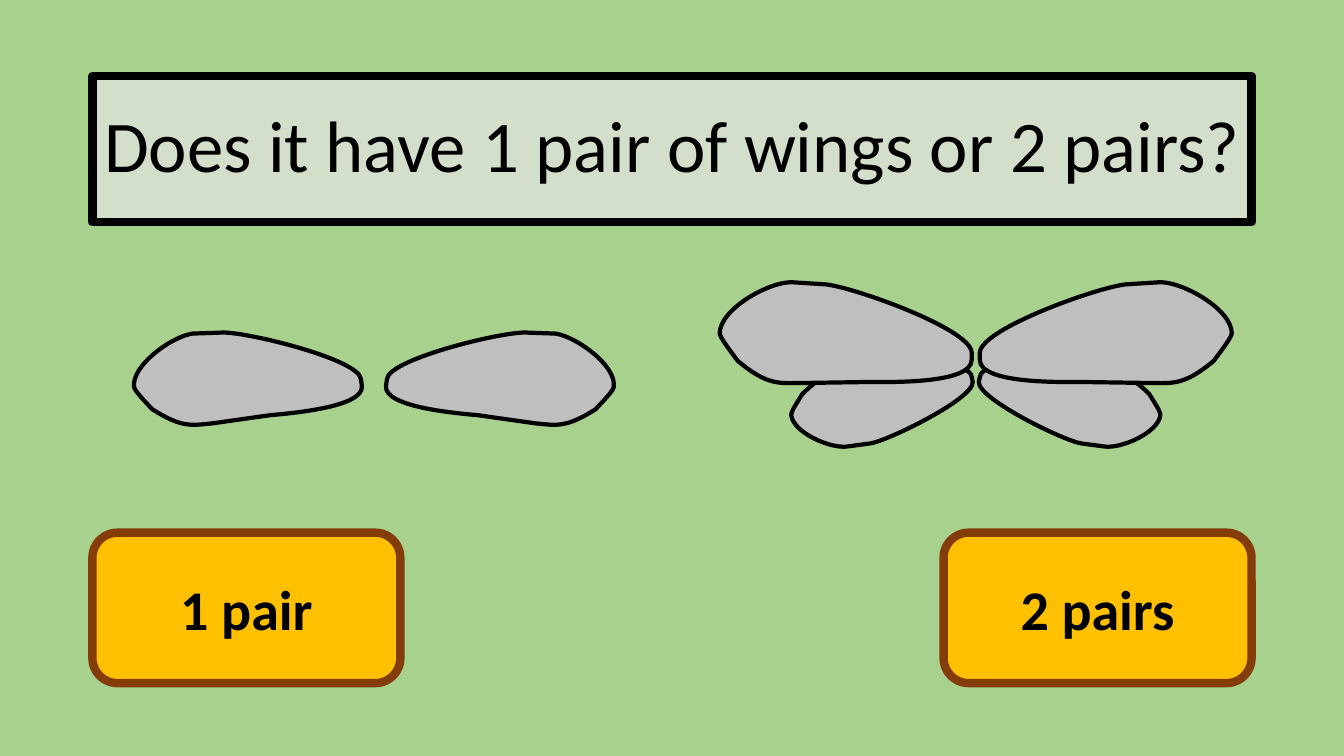
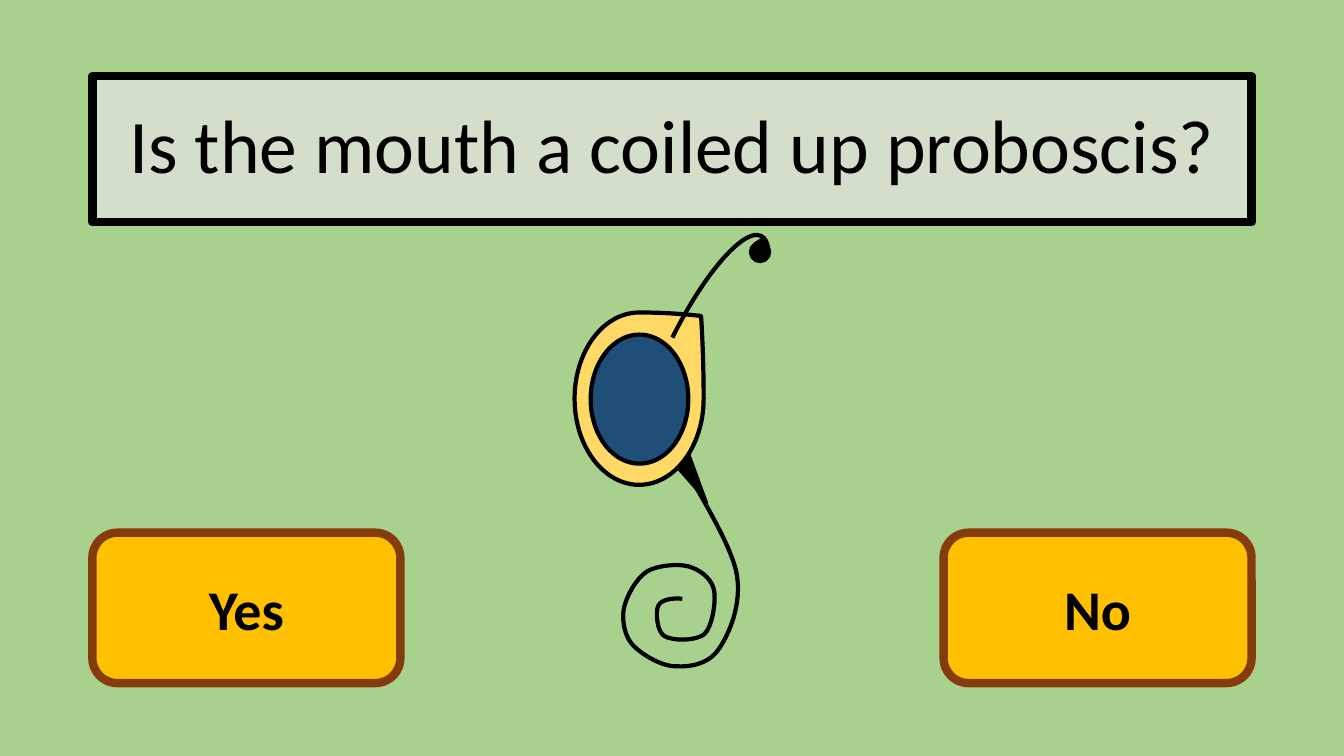
from lxml.etree import SubElement
from pptx import Presentation
from pptx.dml.color import RGBColor
from pptx.enum.shapes import MSO_SHAPE
from pptx.enum.text import MSO_ANCHOR, MSO_AUTO_SIZE, PP_ALIGN
from pptx.oxml.ns import qn
from pptx.util import Pt

GREEN = RGBColor(0xA9, 0xD1, 0x8E)
PALE = RGBColor(0xE7, 0xE6, 0xE6)
BLACK = RGBColor(0x00, 0x00, 0x00)
AMBER = RGBColor(0xFF, 0xC0, 0x00)
BROWN = RGBColor(0x84, 0x3C, 0x0B)
GREY = RGBColor(0xBF, 0xBF, 0xBF)
YELLOW = RGBColor(0xFF, 0xD9, 0x66)
BLUE = RGBColor(0x1F, 0x4E, 0x79)
FONT = "Calibri"
MARGIN, BUTTON_W = 66, 220
SLIDE_W, SLIDE_H = 960, 540

SINGLE_WING = [
    [(257.8, 270.7)],
    [(256.3, 256.3), (172.8, 236.2), (157.7, 237.6)],
    [(137.5, 238.3)],
    [(122.4, 240.5), (93.6, 261.4), (95.8, 276.5)],
    [(96.5, 278.6), (97.2, 280.1), (108.7, 292.3)],
    [(130.3, 306), (136.8, 303.8), (151.9, 302.4)],
    [(193, 296.6)],
    [(208.1, 295.2), (259.9, 290.9), (258.5, 275.8)],
    [(257.8, 270.7)],
]
UPPER_WING = [
    [(694.1, 252)],
    [(694.1, 234.7), (604.1, 203), (587.5, 203)],
    [(565.2, 201.6)],
    [(548.6, 201.6), (514.1, 221), (514.1, 238.3)],
    [(514.8, 240.5), (515.5, 242.6), (527, 257.8)],
    [(548.6, 275.8), (556.6, 273.6), (573.1, 273.6)],
    [(619.9, 272.9)],
    [(636.5, 272.9), (694.1, 274.3), (694.1, 257)],
    [(694.1, 252)],
]
LOWER_WING = [
    [(694.8, 272.9)],
    [(695.5, 285.1), (632.9, 315.4), (621.4, 316.8)],
    [(604.8, 319)],
    [(592.6, 320.4), (566.6, 308.9), (565.2, 296.6)],
    [(565.2, 294.5), (565.9, 293), (573.1, 281.5)],
    [(587.5, 267.1), (593.3, 267.8), (605.5, 266.4)],
    [(639.4, 263.5)],
    [(651.6, 262.8), (692.6, 257), (694.1, 269.3)],
    [(694.8, 272.9)],
]
PROBOSCIS = [
    [(480.2, 321.1)],
    [(482.4, 321.1), (483.8, 321.8), (491, 337)],
    [(499, 352.1), (522.7, 389.5), (526.3, 410.4)],
    [(529.9, 431.3), (521.3, 452.2), (513.4, 463.7)],
    [(506.2, 474.5), (492.5, 476.6), (482.4, 475.9)],
    [(472.3, 475.9), (457.9, 467.3), (451.4, 460.1)],
    [(445.7, 452.9), (444.2, 442.8), (445.7, 434.2)],
    [(447.8, 425.5), (454.3, 413.3), (462.2, 408.2)],
    [(469.4, 403.9), (483.8, 402.5), (491.8, 404.6)],
    [(499.7, 406.8), (507.6, 412.6), (509.8, 420.5)],
    [(511.9, 428.4), (509, 447.1), (503.3, 452.9)],
    [(497.5, 457.9), (480.2, 457.9), (474.5, 454.3)],
    [(469.4, 451.4), (468, 437), (470.2, 432.7)],
    [(472.3, 428.4), (479.5, 427), (487.4, 427.7)],
]
PROBOSCIS_BASE = [[(492.5, 324)], [(505.4, 359.3)], [(484.6, 335.5)], [(492.5, 324)]]


def paint(sp, fill=None, line=BLACK, width=3):
    """Set the fill and outline of a shape."""
    if fill is None:
        sp.fill.background()
    else:
        sp.fill.solid()
        sp.fill.fore_color.rgb = fill
    sp.line.color.rgb = line
    sp.line.width = Pt(width)


def write(sp, text, size, bold=False, spacing=1.0):
    """Write one centred line of text in a shape."""
    tf = sp.text_frame
    tf.word_wrap = True
    tf.auto_size = MSO_AUTO_SIZE.NONE
    tf.vertical_anchor = MSO_ANCHOR.MIDDLE
    tf.margin_left = tf.margin_right = Pt(4)
    p = tf.paragraphs[0]
    p.alignment = PP_ALIGN.CENTER
    p.line_spacing = spacing
    r = p.add_run()
    r.text = text
    r.font.name, r.font.size, r.font.bold = FONT, Pt(size), bold
    r.font.color.rgb = BLACK


def add_preset(s, kind, x, y, w, h, rotation=0, **style):
    """Add a painted preset shape."""
    sp = s.shapes.add_shape(kind, Pt(x), Pt(y), Pt(w), Pt(h))
    sp.shadow.inherit = False
    sp.rotation = rotation
    paint(sp, **style)
    return sp


def add_outline(s, outline, closed=True, **style):
    """Add a freeform whose one-point segments are lines and three-point segments curves."""
    (x, y), *points = [(Pt(px), Pt(py)) for segment in outline for px, py in segment]
    builder = s.shapes.build_freeform(x, y)
    builder.add_line_segments(points, close=closed)
    sp = builder.convert_to_shape()
    sp.shadow.inherit = False
    paint(sp, **style)
    steps = iter(list(sp._element.iter(qn("a:lnTo"))))
    for segment in outline[1:]:
        step = next(steps)
        if len(segment) == 3:
            step.tag = qn("a:cubicBezTo")
            for other in (next(steps), next(steps)):
                step.append(other[0])
                other.getparent().remove(other)


def add_wing_pair(s, wing, axis):
    """Add a left wing and its mirror image about a vertical axis."""
    mirrored = [[(2 * axis - x, y) for x, y in segment] for segment in wing]
    for outline in (wing, mirrored):
        add_outline(s, outline, fill=GREY)


def add_question(prs, question, size, answers):
    """Add a slide with a question and two answer buttons."""
    s = prs.slides.add_slide(prs.slide_layouts[5])
    title = s.shapes.title
    title.left, title.top = Pt(MARGIN), Pt(54.4)
    title.width, title.height = Pt(SLIDE_W - 2 * MARGIN), Pt(104.4)
    paint(title, fill=PALE, width=6)
    color = title.fill._xPr.find(qn("a:solidFill"))[0]
    SubElement(color, qn("a:alpha"), val="70000")
    write(title, question, size, spacing=0.9)
    for x, answer in zip((MARGIN, SLIDE_W - MARGIN - BUTTON_W), answers):
        button = add_preset(s, MSO_SHAPE.ROUNDED_RECTANGLE, x, 380.5, BUTTON_W, 107.5,
                            fill=AMBER, line=BROWN, width=6)
        write(button, answer, 40, bold=True)
    return s


def add_insect_head(s):
    """Draw a head with an eye, an antenna and a coiled proboscis."""
    add_outline(s, PROBOSCIS, closed=False)
    head = add_preset(s, MSO_SHAPE.TEAR, 410.4, 223.2, 92.2, 123.1, fill=YELLOW)
    head.adjustments[0] = 0.96
    add_preset(s, MSO_SHAPE.OVAL, 421.9, 239, 69.8, 92.2, fill=BLUE)
    add_preset(s, MSO_SHAPE.TEAR, 536.4, 173.5, 13, 13, rotation=327.1, fill=BLACK)
    antenna = add_preset(s, MSO_SHAPE.ARC, 409, 227.5, 186.5, 49, rotation=296.4)
    antenna.adjustments[1] = 3.58
    add_outline(s, PROBOSCIS_BASE, fill=BLACK, width=1)


def main():
    """Build and save the two question slides."""
    prs = Presentation()
    prs.slide_width, prs.slide_height = Pt(SLIDE_W), Pt(SLIDE_H)
    background = prs.slide_master.background.fill
    background.solid()
    background.fore_color.rgb = GREEN

    s = add_question(prs, "Does it have 1 pair of wings or 2 pairs?", 52, ("1 pair", "2 pairs"))
    add_wing_pair(s, SINGLE_WING, 267.1)
    add_wing_pair(s, LOWER_WING, 697)
    add_wing_pair(s, UPPER_WING, 697)

    s = add_question(prs, "Is the mouth a coiled up proboscis?", 54, ("Yes", "No"))
    add_insect_head(s)
    prs.save("out.pptx")


if __name__ == "__main__":
    main()
